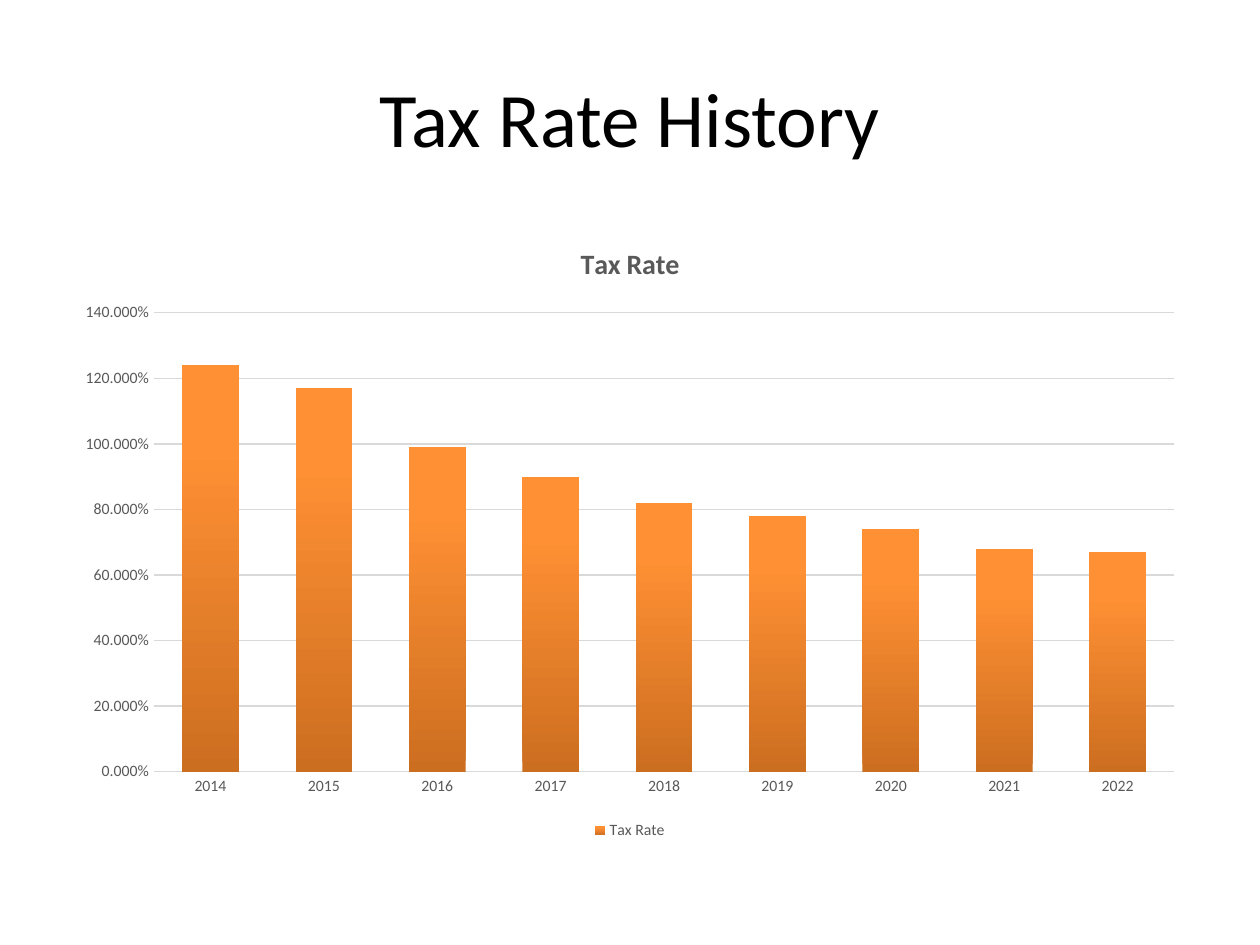
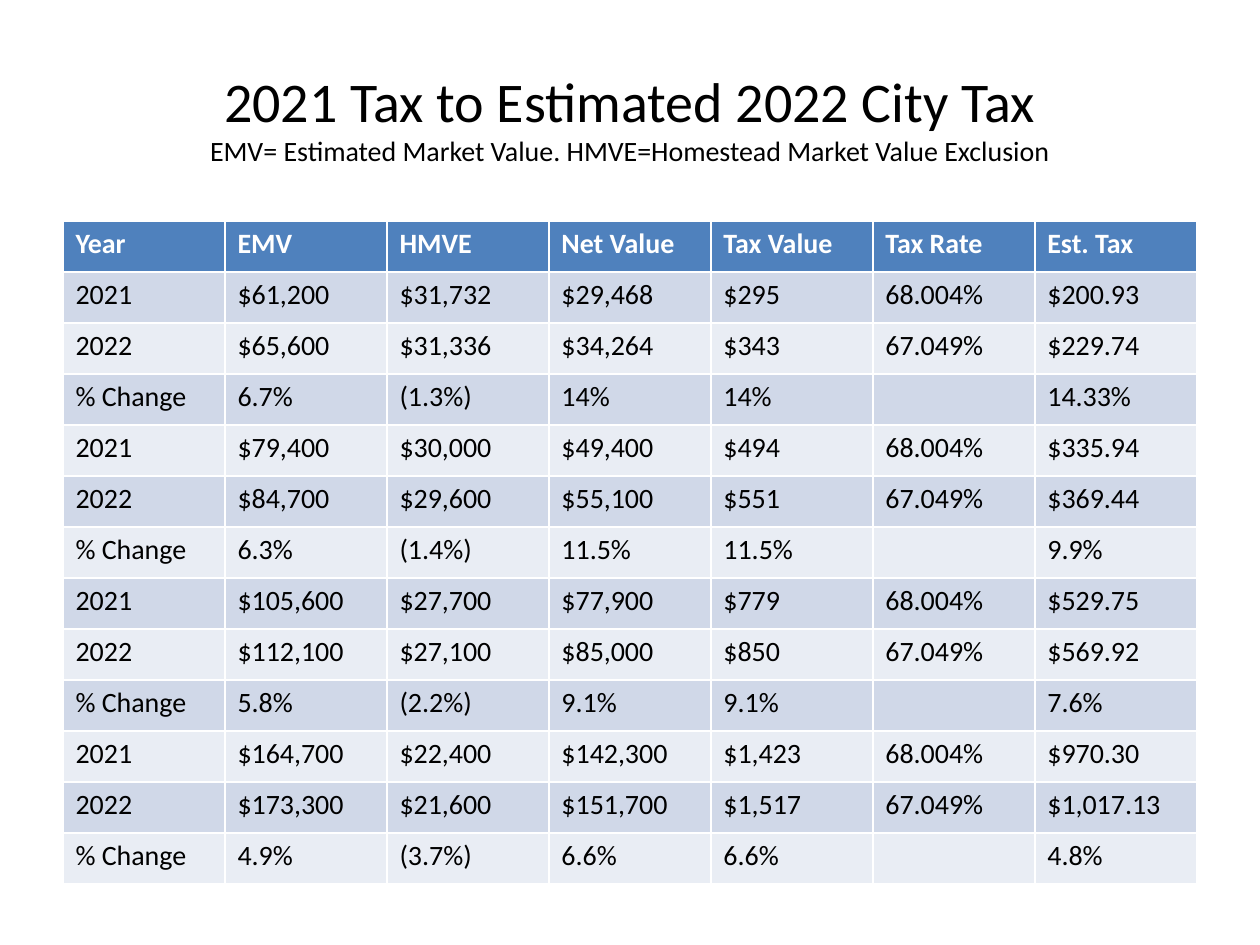
from pptx import Presentation
from pptx.chart.data import CategoryChartData
from pptx.dml.color import RGBColor
from pptx.enum.chart import XL_CHART_TYPE, XL_LEGEND_POSITION, XL_TICK_MARK
from pptx.enum.text import MSO_ANCHOR, PP_ALIGN
from pptx.oxml import parse_xml
from pptx.oxml.ns import nsdecls
from pptx.util import Emu, Pt

BLACK = RGBColor(0x00, 0x00, 0x00)
WHITE = RGBColor(0xFF, 0xFF, 0xFF)
GRAY = RGBColor(0x59, 0x59, 0x59)
RULE = RGBColor(0xD9, 0xD9, 0xD9)
HEADER = RGBColor(0x4F, 0x81, 0xBD)
BANDS = [RGBColor(0xE9, 0xED, 0xF4), RGBColor(0xD0, 0xD8, 0xE8)]
BAR_STOPS = [(0, RGBColor(0xCC, 0x6E, 0x20)), (80, RGBColor(0xFF, 0x90, 0x34)),
             (100, RGBColor(0xFF, 0x91, 0x36))]
FONT = "Calibri"


def px(length):
    return Emu(round(length * 914400 / 126))


def write(paragraph, text, size=16, color=BLACK, bold=False):
    run = paragraph.add_run()
    run.text = text
    run.font.name = FONT
    run.font.size = Pt(size)
    run.font.bold = bold
    run.font.color.rgb = color


LEFT, BODY_TOP, WIDTH = px(63), px(221), px(1134)
titles = [
    [("Tax Rate History", 44)],
    [("2021 Tax to Estimated 2022 City Tax", 32),
     ("EMV= Estimated Market Value. HMVE=Homestead Market Value Exclusion", 16)],
]

deck = Presentation()
deck.slide_width, deck.slide_height = px(1260), px(945)
slides = []
for lines in titles:
    slide = deck.slides.add_slide(deck.slide_layouts[6])
    slides.append(slide)
    title_frame = slide.shapes.add_textbox(LEFT, px(38), WIDTH, px(158)).text_frame
    title_frame.word_wrap = True
    title_frame.vertical_anchor = MSO_ANCHOR.MIDDLE
    heading = title_frame.paragraphs[0]
    heading.alignment = PP_ALIGN.CENTER
    for number, (line, size) in enumerate(lines):
        if number:
            heading.add_line_break()
        write(heading, line, size=size)

history_slide, estimate_slide = slides

rates = CategoryChartData(number_format="0.000%")
rates.categories = [str(year) for year in range(2014, 2023)]
rates.add_series("Tax Rate", [1.24, 1.17, 0.99, 0.9, 0.82, 0.78, 0.74, 0.68, 0.67])
history = history_slide.shapes.add_chart(
    XL_CHART_TYPE.COLUMN_CLUSTERED, LEFT, BODY_TOP, WIDTH, px(624), rates).chart
history.font.name = FONT
history.font.size = Pt(10)
history.font.color.rgb = BLACK
history.has_title = True
write(history.chart_title.text_frame.paragraphs[0], "Tax Rate", size=16, color=GRAY, bold=True)
history.has_legend = True
history.legend.position = XL_LEGEND_POSITION.BOTTOM
history.legend.include_in_layout = False

years, percents = history.category_axis, history.value_axis
for axis in (years, percents):
    axis.major_tick_mark = XL_TICK_MARK.NONE
    axis.minor_tick_mark = XL_TICK_MARK.NONE
for font in (years.tick_labels.font, percents.tick_labels.font, history.legend.font):
    font.name = FONT
    font.size = Pt(9)
    font.color.rgb = GRAY
years.format.line.color.rgb = RULE
years.format.line.width = Pt(1)
percents.minimum_scale, percents.maximum_scale, percents.major_unit = 0, 1.4, 0.2
percents.tick_labels.number_format = "0.000%"
percents.tick_labels.number_format_is_linked = False
percents.format.line.fill.background()
percents.major_gridlines.format.line.color.rgb = RULE
percents.major_gridlines.format.line.width = Pt(0.75)

bars = history.plots[0]
bars.vary_by_categories = False
bars.gap_width = 100
bars.overlap = -24
stops = "".join(f'<a:gs pos="{place * 1000}"><a:srgbClr val="{color}"/></a:gs>'
                for place, color in BAR_STOPS)
bars.series[0].format.fill.background()
bar_format = bars.series[0]._element.get_or_add_spPr()
bar_format.replace(bar_format[0], parse_xml(
    f'<a:gradFill {nsdecls("a")} rotWithShape="1"><a:gsLst>{stops}</a:gsLst>'
    '<a:lin ang="16200000" scaled="0"/></a:gradFill>'))

estimates = [
    ["Year", "EMV", "HMVE", "Net Value", "Tax Value", "Tax Rate", "Est. Tax"],
    ["2021", "$61,200", "$31,732", "$29,468", "$295", "68.004%", "$200.93"],
    ["2022", "$65,600", "$31,336", "$34,264", "$343", "67.049%", "$229.74"],
    ["% Change", "6.7%", "(1.3%)", "14%", "14%", "", "14.33%"],
    ["2021", "$79,400", "$30,000", "$49,400", "$494", "68.004%", "$335.94"],
    ["2022", "$84,700", "$29,600", "$55,100", "$551", "67.049%", "$369.44"],
    ["% Change", "6.3%", "(1.4%)", "11.5%", "11.5%", "", "9.9%"],
    ["2021", "$105,600", "$27,700", "$77,900", "$779", "68.004%", "$529.75"],
    ["2022", "$112,100", "$27,100", "$85,000", "$850", "67.049%", "$569.92"],
    ["% Change", "5.8%", "(2.2%)", "9.1%", "9.1%", "", "7.6%"],
    ["2021", "$164,700", "$22,400", "$142,300", "$1,423", "68.004%", "$970.30"],
    ["2022", "$173,300", "$21,600", "$151,700", "$1,517", "67.049%", "$1,017.13"],
    ["% Change", "4.9%", "(3.7%)", "6.6%", "6.6%", "", "4.8%"],
]
tax_table = estimate_slide.shapes.add_table(
    len(estimates), len(estimates[0]), LEFT, BODY_TOP, WIDTH, px(51 * len(estimates))).table
for row, entries in enumerate(estimates):
    is_header = row == 0
    for column, entry in enumerate(entries):
        cell = tax_table.cell(row, column)
        cell.fill.solid()
        cell.fill.fore_color.rgb = HEADER if is_header else BANDS[row % 2]
        write(cell.text_frame.paragraphs[0], entry,
              color=WHITE if is_header else BLACK, bold=is_header)

deck.save("out.pptx")
